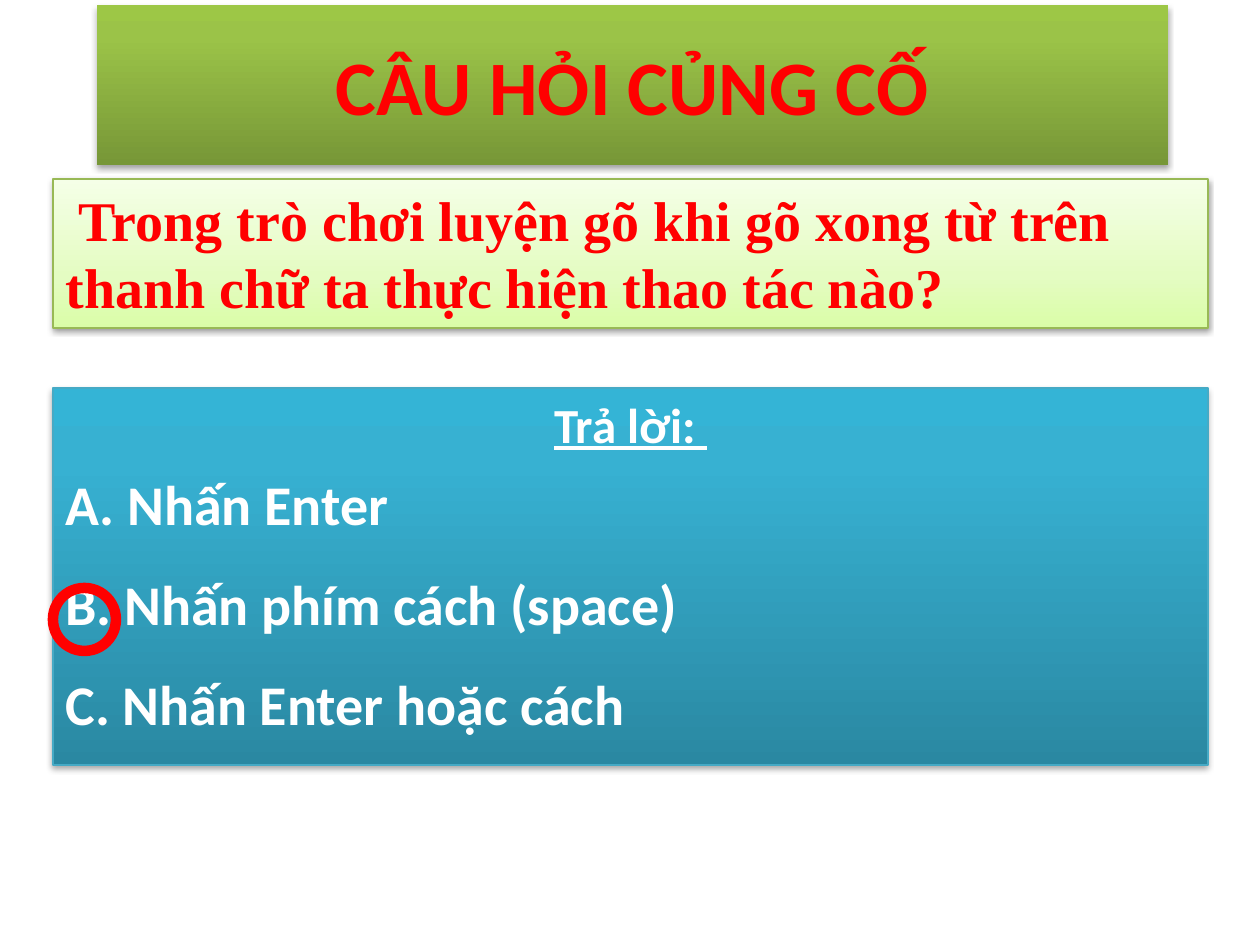
import pptx
import pptx.util
import pptx.oxml
import pptx.oxml.ns
import pptx.dml.color
import pptx.enum.text
import pptx.enum.shapes

PX = 914400 / 126
HUE = {"red": "FF0000", "white": "FFFFFF", "lime": "98B955", "teal": "46AAC5"}
FADE = {
    "green": [(0, "779737"), (80, "9BC348"), (100, "9DC746")],
    "pale": [(0, "DAFDA7"), (35, "E4FCC2"), (100, "F5FFE7")],
    "blue": [(0, "2A88A2"), (80, "37B1D2"), (100, "34B4D6")],
}
TITLE = "CÂU HỎI CỦNG CỐ"
ASK = " Trong trò chơi luyện gõ khi gõ xong từ trên thanh chữ ta thực hiện thao tác nào?"
HEAD = "Trả lời: "
PICKS = ["A. Nhấn Enter", "B. Nhấn phím cách (space)", "C. Nhấn Enter hoặc cách"]
BOX = {
    "title": (97, 5, 1071, 160),
    "ask": (53, 179, 1155, 149),
    "reply": (53, 388, 1155, 377),
    "ring": (53, 588, 63, 63),
}
NS = pptx.oxml.ns.nsdecls("a")
Align = pptx.enum.text.PP_ALIGN
Anchor = pptx.enum.text.MSO_ANCHOR
Kind = pptx.enum.shapes.MSO_SHAPE


def rgb(name):
    return pptx.dml.color.RGBColor.from_string(HUE[name])


def emu(box):
    return [round(n * PX) for n in box]


def place(shape, box):
    shape.left, shape.top, shape.width, shape.height = emu(box)


def style(shape, fade, edge=None, alpha=35, drop=1.8):
    shape.fill.gradient()
    shape.fill.gradient_angle = 90
    stops = shape.fill._fill._gradFill.find(pptx.oxml.ns.qn("a:gsLst"))
    for stop in list(stops):
        stops.remove(stop)
    for pos, tint in FADE[fade]:
        stops.append(pptx.oxml.parse_xml(
            f'<a:gs {NS} pos="{pos * 1000}"><a:srgbClr val="{tint}"/></a:gs>'))
    if edge:
        shape.line.color.rgb = rgb(edge)
        shape.line.width = pptx.util.Pt(0.75)
    else:
        shape.line.fill.background()
    shape.shadow.inherit = False
    effect = shape._element.spPr.find(pptx.oxml.ns.qn("a:effectLst"))
    effect.append(pptx.oxml.parse_xml(
        f'<a:outerShdw {NS} blurRad="{round(3.1 * 12700)}" dist="{round(drop * 12700)}" '
        f'dir="5400000" rotWithShape="0"><a:srgbClr val="000000">'
        f'<a:alpha val="{alpha * 1000}"/></a:srgbClr></a:outerShdw>'))


def write(para, text, size, tint, face="Calibri", align=Align.LEFT, line=False):
    para.alignment = align
    run = para.add_run()
    run.text = text
    font = run.font
    font.name, font.size, font.bold = face, pptx.util.Pt(size), True
    font.underline = line
    font.color.rgb = rgb(tint)


def panel(slide, key, *look):
    shape = slide.shapes.add_shape(Kind.RECTANGLE, *emu(BOX[key]))
    style(shape, *look)
    frame = shape.text_frame
    frame.word_wrap = True
    frame.vertical_anchor = Anchor.TOP
    return frame


def main():
    deck = pptx.Presentation()
    deck.slide_width = pptx.util.Inches(10)
    deck.slide_height = pptx.util.Inches(7.5)
    slide = deck.slides.add_slide(deck.slide_layouts[5])

    title = slide.shapes.title
    place(title, BOX["title"])
    style(title, "green")
    title.text_frame.vertical_anchor = Anchor.MIDDLE
    write(title.text_frame.paragraphs[0], TITLE, 44, "red", align=Align.CENTER)

    ask = panel(slide, "ask", "pale", "lime", 38, 1.6)
    write(ask.paragraphs[0], ASK, 32, "red", "Times New Roman")

    reply = panel(slide, "reply", "blue", "teal")
    write(reply.paragraphs[0], HEAD, 28, "white", align=Align.CENTER, line=True)
    for pick in PICKS:
        para = reply.add_paragraph()
        para.space_before = para.space_after = pptx.util.Pt(9.4)
        write(para, pick, 32, "white")

    ring = slide.shapes.add_shape(Kind.OVAL, *emu(BOX["ring"]))
    ring.shadow.inherit = False
    ring.fill.background()
    ring.line.color.rgb = rgb("red")
    ring.line.width = pptx.util.Pt(6)

    deck.save("out.pptx")


if __name__ == "__main__":
    main()
